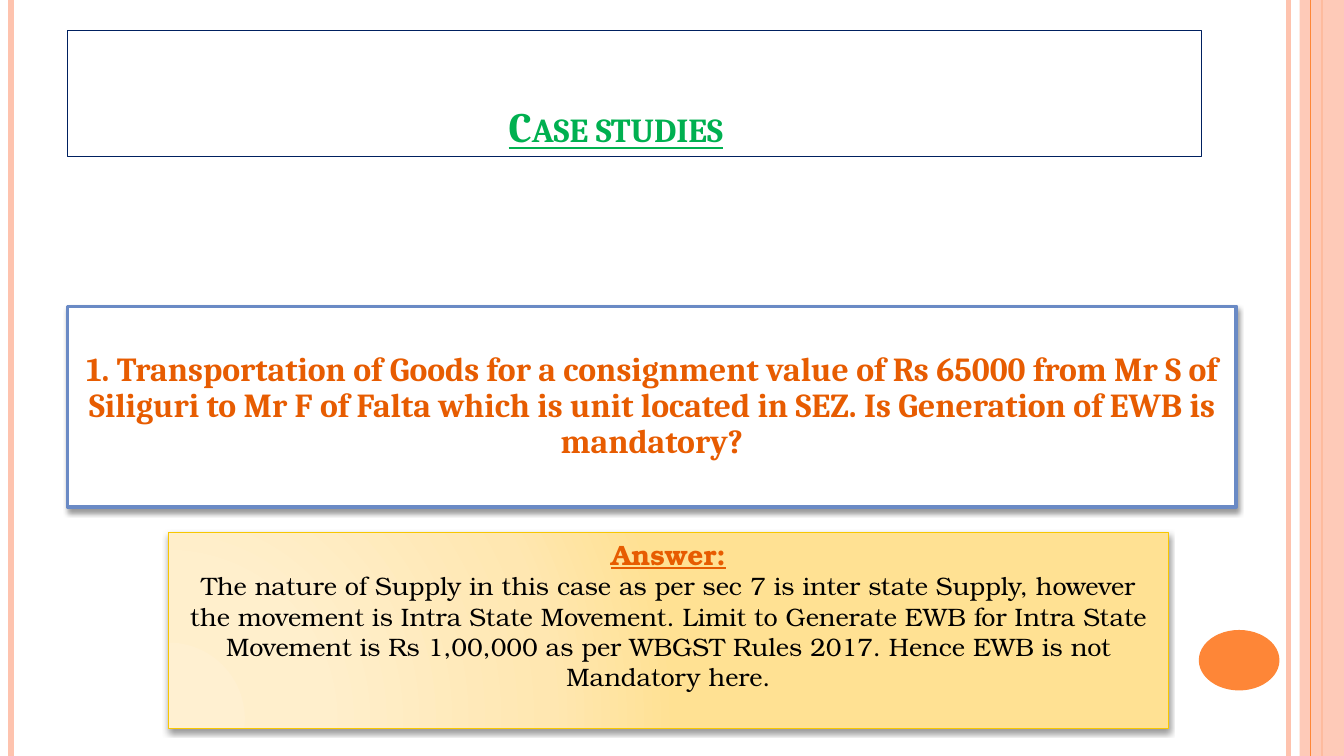
from lxml import etree
from pptx import Presentation
from pptx.dml.color import RGBColor
from pptx.enum.shapes import MSO_CONNECTOR, MSO_SHAPE
from pptx.enum.text import MSO_ANCHOR, PP_ALIGN
from pptx.oxml.ns import qn
from pptx.util import Pt

PX = 9144
W, H = 1333, 750
STRAIGHT = MSO_CONNECTOR.STRAIGHT
RECT, OVAL = MSO_SHAPE.RECTANGLE, MSO_SHAPE.OVAL
TOP, MIDDLE, BOTTOM = MSO_ANCHOR.TOP, MSO_ANCHOR.MIDDLE, MSO_ANCHOR.BOTTOM
CENTER = PP_ALIGN.CENTER

THEME = {
    "peach": "FEC3AE", "orange": "FE8637", "navy": "002060", "blue": "6A8AC5",
    "gold": "F8C700", "white": "FFFFFF", "shadow": "000000",
    "cream": [(0, "FFF0D1"), (30, "FFEFCC"), (75, "FFE7B1"), (100, "FFE193")],
    "title": {"name": "Cambria", "size": Pt(30), "bold": True, "underline": True, "color": "00B050"},
    "question": {"name": "Cambria", "size": Pt(24), "bold": True, "color": "E75C01"},
    "heading": {"name": "TeX Gyre Bonum", "size": Pt(20), "bold": True, "underline": True, "color": "E75C01"},
    "body": {"name": "TeX Gyre Bonum", "size": Pt(18), "color": "000000"},
}
THEME["tab"] = {**THEME["title"], "underline": False}


def add_color(parent, color, alpha=100):
    clr = etree.SubElement(parent, qn("a:srgbClr"), val=color)
    if alpha < 100:
        etree.SubElement(clr, qn("a:alpha"), val=str(alpha * 1000))


def add_run(p, text, style):
    r = p.add_run()
    r.text = text
    for key, value in THEME[style].items():
        if key == "color":
            r.font.color.rgb = RGBColor.from_string(value)
        else:
            setattr(r.font, key, value)
    return r


prs = Presentation()
prs.slide_width, prs.slide_height = W * PX, H * PX
s = prs.slides.add_slide(prs.slide_layouts[6])

stripes = [
    ("line", 1278, "peach", 3), ("line", 11, "peach", 4.5),
    ("line", 1311, "orange", 1.5), ("band", 1289, "peach", 87),
    ("line", 1300, "orange", 0.75),
]
for kind, x, color, value in stripes:
    if kind == "line":
        cn = s.shapes.add_connector(STRAIGHT, x * PX, 0, x * PX, H * PX)
        cn.line.color.rgb = RGBColor.from_string(THEME[color])
        cn.line.width = Pt(value)
        etree.SubElement(cn._element.spPr, qn("a:effectLst"))
    else:
        band = s.shapes.add_shape(RECT, x * PX, 0, (W - x) * PX, H * PX)
        band.shadow.inherit = False
        band.line.fill.background()
        band.fill.solid()
        fill = band._element.spPr.find(qn("a:solidFill"))
        fill.clear()
        add_color(fill, THEME[color], value)

dot = s.shapes.add_shape(OVAL, 1189 * PX, 625 * PX, 80 * PX, 60 * PX)
dot.shadow.inherit = False
dot.fill.solid()
dot.fill.fore_color.rgb = RGBColor.from_string(THEME["orange"])
dot.line.fill.background()

boxes = [
    {"at": (67, 30, 1125, 125), "fill": None, "line": ("navy", 0.75), "shadow": False,
     "anchor": BOTTOM, "inset": None, "spacing": None,
     "text": [[("Case studies", "title"), ("\t", "tab")]]},
    {"at": (67, 304, 1159, 199), "fill": "white", "line": ("blue", 2.75), "shadow": True,
     "anchor": MIDDLE, "inset": 2, "spacing": 0.9,
     "text": [[("1. Transportation of Goods for a consignment value of Rs 65000 from Mr S of "
                "Siliguri to Mr F of Falta which is unit located in SEZ. Is Generation of EWB "
                "is mandatory?", "question")]]},
    {"at": (167, 528, 992, 195), "fill": "cream", "line": ("gold", 1), "shadow": True,
     "anchor": TOP, "inset": None, "spacing": None,
     "text": [[("Answer:", "heading")],
              [("The nature of Supply in this case as per sec 7 is inter state Supply, however "
                "the movement is Intra State Movement. Limit to Generate EWB for Intra State "
                "Movement is Rs 1,00,000 as per WBGST Rules 2017. Hence EWB is not Mandatory "
                "here.", "body")]]},
]
for box in boxes:
    sp = s.shapes.add_shape(RECT, *(n * PX for n in box["at"]))
    sp.shadow.inherit = False
    color, width = box["line"]
    sp.line.color.rgb = RGBColor.from_string(THEME[color])
    sp.line.width = Pt(width)

    if box["fill"] is None:
        sp.fill.background()
    elif box["fill"] == "cream":
        sp.fill.gradient()
        grad = sp._element.spPr.find(qn("a:gradFill"))
        grad.clear()
        stops = etree.SubElement(grad, qn("a:gsLst"))
        for pos, stop in THEME["cream"]:
            add_color(etree.SubElement(stops, qn("a:gs"), pos=str(pos * 1000)), stop)
        circle = etree.SubElement(grad, qn("a:path"), {"path": "circle"})
        etree.SubElement(circle, qn("a:fillToRect"), l="5000", t="100000", r="120000", b="10000")
    else:
        sp.fill.solid()
        sp.fill.fore_color.rgb = RGBColor.from_string(THEME[box["fill"]])

    if box["shadow"]:
        effects = sp._element.spPr.find(qn("a:effectLst"))
        shade = etree.SubElement(effects, qn("a:outerShdw"), blurRad=str(Pt(4)), dist=str(Pt(2)),
                                 dir="5400000", rotWithShape="0")
        add_color(shade, THEME["shadow"], 40)

    tf = sp.text_frame
    tf.word_wrap = True
    tf.vertical_anchor = box["anchor"]
    if box["inset"] is not None:
        for side in ("left", "top", "right", "bottom"):
            setattr(tf, f"margin_{side}", box["inset"] * PX)
    for i, runs in enumerate(box["text"]):
        p = tf.add_paragraph() if i else tf.paragraphs[0]
        p.alignment = CENTER
        p.line_spacing = box["spacing"]
        for text, style in runs:
            r = add_run(p, text, style)
            if style in ("title", "tab"):
                r.font._element.set("cap", "small")

prs.save("out.pptx")
